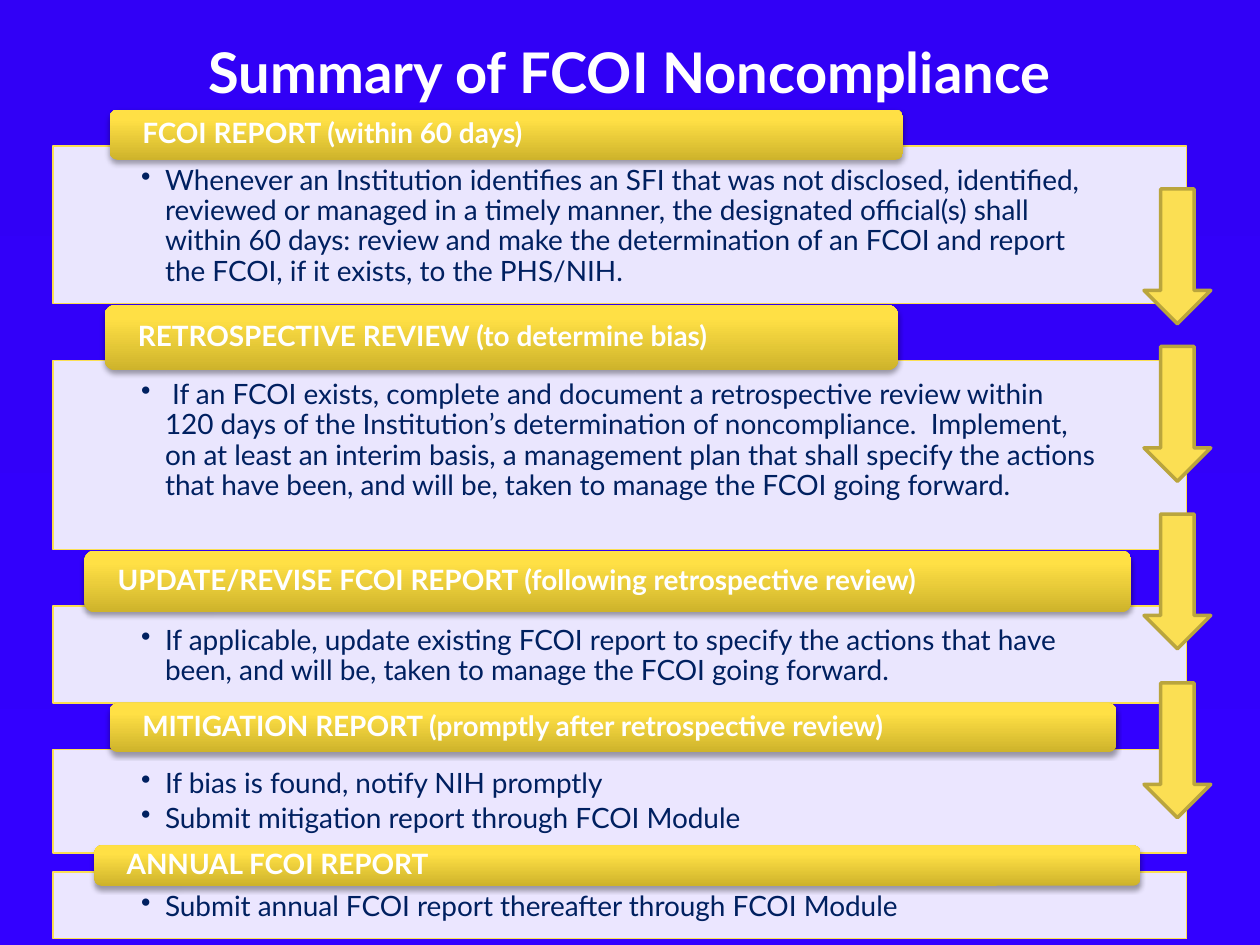
from lxml import etree
from pptx import Presentation
from pptx.dml.color import RGBColor
from pptx.enum.shapes import MSO_SHAPE
from pptx.enum.text import MSO_ANCHOR, PP_ALIGN
from pptx.oxml import parse_xml
from pptx.oxml.ns import nsdecls, qn
from pptx.util import Inches, Pt

WHITE = RGBColor(0xFF, 0xFF, 0xFF)
NAVY = RGBColor(0x00, 0x20, 0x60)
YELLOW = RGBColor(0xFB, 0xDF, 0x53)
OLIVE = RGBColor(0xBA, 0xA5, 0x3D)
GOLD_DARK = RGBColor(0xCE, 0xB3, 0x2B)
GOLD_LIGHT = RGBColor(0xFF, 0xE0, 0x45)
BLUE_TOP = RGBColor(0x31, 0x00, 0xF6)
BLUE_BOTTOM = RGBColor(0x33, 0x00, 0xFF)

TITLE = "Summary of FCOI Noncompliance"

# heading, heading (left, top, width, height), panel (top, height), bullets
SECTIONS = [
    ("FCOI REPORT (within 60 days)", (0.87, 0.87, 6.3, 0.4), (1.16, 1.25),
     ["Whenever an Institution identifies an SFI that was not disclosed, identified, "
      "reviewed or managed in a timely manner, the designated official(s) shall within "
      "60 days: review and make the determination of an FCOI and report the FCOI, if it "
      "exists, to the PHS/NIH."]),
    ("RETROSPECTIVE REVIEW (to determine bias)", (0.83, 2.42, 6.3, 0.52), (2.86, 1.5),
     [" If an FCOI exists, complete and document a retrospective review within 120 days "
      "of the Institution’s determination of noncompliance.  Implement, on at least an "
      "interim basis, a management plan that shall specify the actions that have been, "
      "and will be, taken to manage the FCOI going forward."]),
    ("UPDATE/REVISE FCOI REPORT (following retrospective review)",
     (0.67, 4.37, 8.31, 0.49), (4.81, 0.77),
     ["If applicable, update existing FCOI report to specify the actions that have been, "
      "and will be, taken to manage the FCOI going forward."]),
    ("MITIGATION REPORT (promptly after retrospective review)",
     (0.87, 5.58, 7.99, 0.39), (5.95, 0.82),
     ["If bias is found, notify NIH promptly",
      "Submit mitigation report through FCOI Module"]),
    ("ANNUAL FCOI REPORT", (0.75, 6.71, 8.3, 0.32), (6.92, 0.53),
     ["Submit annual FCOI report thereafter through FCOI Module"]),
]
PANEL_LEFT, PANEL_WIDTH = 0.42, 9
ARROW_LEFT, ARROW_SIZE = 9.08, (0.53, 1.07)
ARROW_TOPS = [1.5, 2.75, 4.08, 5.42]


def write_text(shape, *paragraphs, size=16, color=WHITE, bold=False, bullet=False,
               align=PP_ALIGN.LEFT, anchor=MSO_ANCHOR.TOP, spacing=0.9,
               insets=(0.1, 0.05, 0.1, 0.05)):
    frame = shape.text_frame
    frame.word_wrap = True
    frame.vertical_anchor = anchor
    (frame.margin_left, frame.margin_top,
     frame.margin_right, frame.margin_bottom) = map(Inches, insets)
    for index, text in enumerate(paragraphs):
        paragraph = frame.add_paragraph() if index else frame.paragraphs[0]
        paragraph.alignment = align
        paragraph.line_spacing = spacing
        if bullet:
            paragraph.space_after = Pt(2.4)
            properties = paragraph._p.get_or_add_pPr()
            properties.set("marL", str(Inches(0.19)))
            properties.set("indent", str(-Inches(0.19)))
            etree.SubElement(properties, qn("a:buChar")).set("char", "•")
        run = paragraph.add_run()
        run.text = text
        run.font.name = "Lato"
        run.font.size = Pt(size)
        run.font.bold = bold
        run.font.color.rgb = color


def add_block(slide, preset, left, top, width, height, fill=None, line=None, line_width=1):
    block = slide.shapes.add_shape(preset, *map(Inches, (left, top, width, height)))
    block.shadow.inherit = False
    if fill is not None:
        block.fill.solid()
        block.fill.fore_color.rgb = fill
    if line is None:
        block.line.fill.background()
    else:
        block.line.color.rgb = line
        block.line.width = Pt(line_width)
    return block


def set_gradient(fill, start, end, angle, end_position=1.0):
    fill.gradient()
    fill.gradient_angle = angle
    first, last = fill.gradient_stops
    first.color.rgb, first.position = start, 0
    last.color.rgb, last.position = end, end_position


def add_panel(slide, top, height, bullets):
    panel = add_block(slide, MSO_SHAPE.RECTANGLE, PANEL_LEFT, top, PANEL_WIDTH, height,
                      fill=WHITE, line=YELLOW, line_width=0.75)
    fill_color = panel._element.spPr.find(qn("a:solidFill"))[0]
    etree.SubElement(fill_color, qn("a:alpha")).set("val", "90000")
    write_text(panel, *bullets, color=NAVY, bullet=True, insets=(0.7, 0.16, 0.7, 0.12))


def add_heading(slide, text, place):
    heading = add_block(slide, MSO_SHAPE.ROUNDED_RECTANGLE, *place)
    set_gradient(heading.fill, GOLD_DARK, GOLD_LIGHT, 90, 0.8)
    heading._element.spPr.find(qn("a:effectLst")).append(parse_xml(
        f'<a:outerShdw {nsdecls("a")} blurRad="{Pt(3.1)}" dist="{Pt(1.8)}" dir="5400000" '
        'rotWithShape="0"><a:srgbClr val="000000"><a:alpha val="35000"/></a:srgbClr>'
        '</a:outerShdw>'))
    write_text(heading, text, bold=True, anchor=MSO_ANCHOR.MIDDLE, insets=(0.24, 0, 0.24, 0))


def main():
    deck = Presentation()
    deck.slide_width, deck.slide_height = Inches(10), Inches(7.5)
    slide = deck.slides.add_slide(deck.slide_layouts[6])
    set_gradient(slide.background.fill, BLUE_TOP, BLUE_BOTTOM, 270)

    # Sections: each heading overlaps the top of its panel
    for heading, heading_place, panel_place, bullets in SECTIONS:
        add_panel(slide, *panel_place, bullets)
        add_heading(slide, heading, heading_place)

    # Arrows down the right side
    for top in ARROW_TOPS:
        add_block(slide, MSO_SHAPE.DOWN_ARROW, ARROW_LEFT, top, *ARROW_SIZE,
                  fill=YELLOW, line=OLIVE, line_width=2)

    # Title
    title = slide.shapes.add_textbox(*map(Inches, (0, 0.25, 10, 0.64)))
    write_text(title, TITLE, size=32, bold=True, align=PP_ALIGN.CENTER, spacing=1.0)

    deck.save("out.pptx")


if __name__ == "__main__":
    main()
